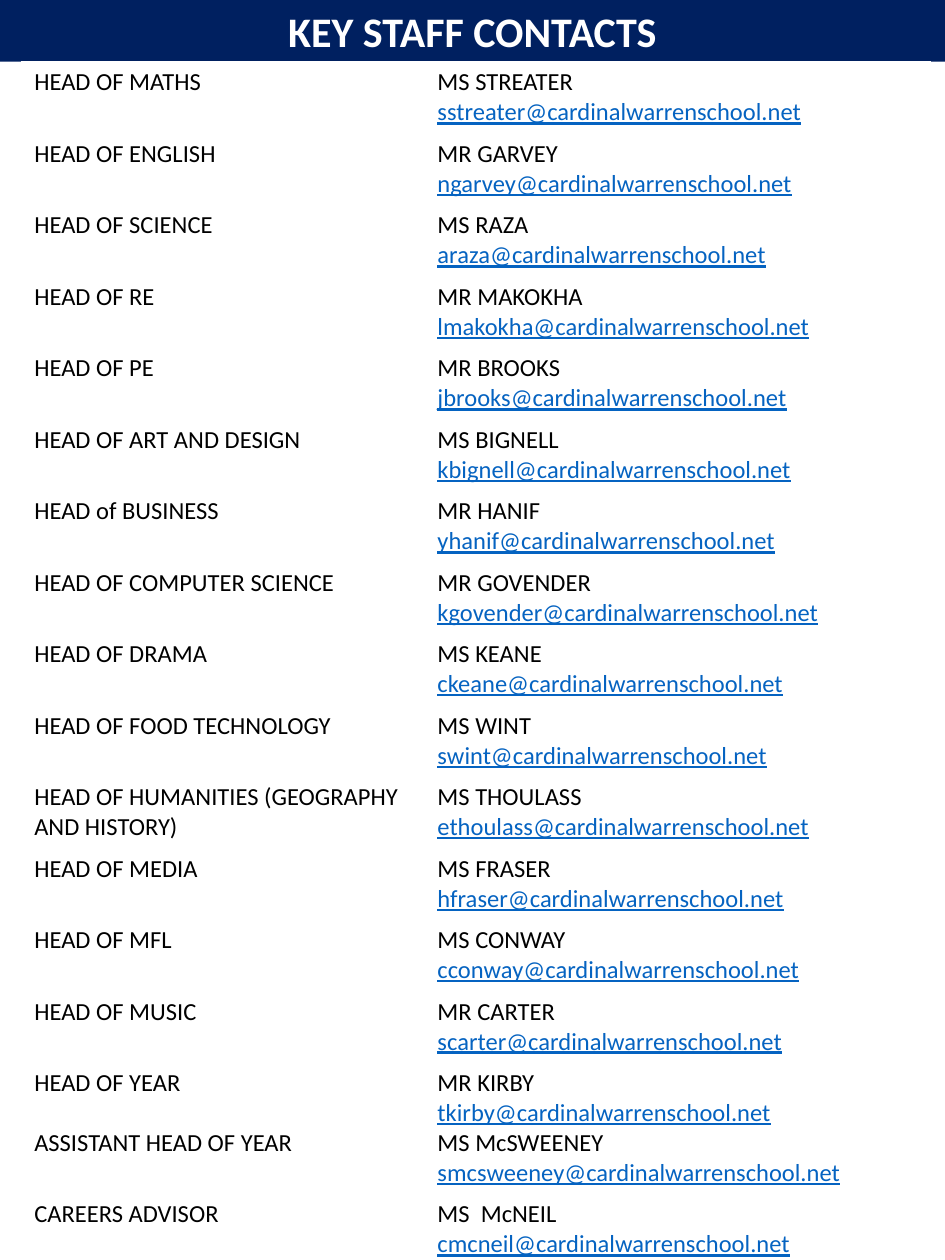
from dataclasses import dataclass

from pptx import Presentation
from pptx.dml.color import RGBColor
from pptx.enum.text import MSO_ANCHOR, MSO_AUTO_SIZE, PP_ALIGN
from pptx.util import Pt

CENTER = PP_ALIGN.CENTER
LEFT = PP_ALIGN.LEFT
MIDDLE = MSO_ANCHOR.MIDDLE
TOP = MSO_ANCHOR.TOP
FIXED_SIZE = MSO_AUTO_SIZE.NONE
TITLE_ONLY = 5

DOMAIN = "cardinalwarrenschool.net"
CONTACTS = [
    [("HEAD OF MATHS", "MS STREATER", "sstreater")],
    [("HEAD OF ENGLISH", "MR GARVEY", "ngarvey")],
    [("HEAD OF SCIENCE", "MS RAZA", "araza")],
    [("HEAD OF RE", "MR MAKOKHA", "lmakokha")],
    [("HEAD OF PE", "MR BROOKS", "jbrooks")],
    [("HEAD OF ART AND DESIGN", "MS BIGNELL", "kbignell")],
    [("HEAD of BUSINESS", "MR HANIF", "yhanif")],
    [("HEAD OF COMPUTER SCIENCE", "MR GOVENDER", "kgovender")],
    [("HEAD OF DRAMA", "MS KEANE", "ckeane")],
    [("HEAD OF FOOD TECHNOLOGY", "MS WINT", "swint")],
    [("HEAD OF HUMANITIES (GEOGRAPHY AND HISTORY)", "MS THOULASS", "ethoulass")],
    [("HEAD OF MEDIA", "MS FRASER", "hfraser")],
    [("HEAD OF MFL", "MS CONWAY", "cconway")],
    [("HEAD OF MUSIC", "MR CARTER", "scarter")],
    [
        ("HEAD OF YEAR", "MR KIRBY", "tkirby"),
        ("ASSISTANT HEAD OF YEAR", "MS McSWEENEY", "smcsweeney"),
    ],
    [("CAREERS ADVISOR", "MS  McNEIL", "cmcneil")],
]


@dataclass(frozen=True)
class Theme:
    font: str = "Calibri"
    title_size: float = 24
    body_size: float = 14
    line_height: float = 17
    banner: RGBColor = RGBColor(0x00, 0x20, 0x60)
    title: RGBColor = RGBColor(0xFF, 0xFF, 0xFF)
    text: RGBColor = RGBColor(0x00, 0x00, 0x00)
    link: RGBColor = RGBColor(0x05, 0x63, 0xC1)


def write_line(frame, text, *, font, size, color, first=False, bold=False,
               underline=False, align=LEFT, space_before=0):
    para = frame.paragraphs[0] if first else frame.add_paragraph()
    para.alignment = align
    para.space_before = Pt(space_before)
    span = para.add_run()
    span.text = text
    span.font.name = font
    span.font.size = Pt(size)
    span.font.color.rgb = color
    span.font.bold = bold
    span.font.underline = underline


class ContactPage:
    def __init__(self, page, theme):
        self.page = page
        self.theme = theme

    def banner(self, text, left, top, width, height):
        box = self.page.shapes.title
        box.left, box.top, box.width, box.height = map(Pt, (left, top, width, height))
        box.fill.solid()
        box.fill.fore_color.rgb = self.theme.banner
        frame = box.text_frame
        frame.auto_size = FIXED_SIZE
        frame.vertical_anchor = MIDDLE
        write_line(frame, text, font=self.theme.font, size=self.theme.title_size,
                   color=self.theme.title, first=True, bold=True, align=CENTER)

    def cell(self, cell, lines):
        cell.fill.background()
        cell.vertical_anchor = TOP
        cell.margin_left = cell.margin_right = Pt(7.2)
        cell.margin_top = cell.margin_bottom = Pt(3.4)
        for index, (text, is_link, gap) in enumerate(lines):
            write_line(cell.text_frame, text, font=self.theme.font,
                       size=self.theme.body_size,
                       color=self.theme.link if is_link else self.theme.text,
                       first=index == 0, underline=is_link, space_before=gap)

    def contact_table(self, contacts, left, top, column_widths, row_height):
        holder = self.page.shapes.add_table(
            len(contacts), len(column_widths), Pt(left), Pt(top),
            Pt(sum(column_widths)), Pt(row_height * len(contacts)))
        table = holder.table
        table.first_row = False
        table.horz_banding = False
        for column, width in zip(table.columns, column_widths):
            column.width = Pt(width)
        for row, people in zip(table.rows, contacts):
            roles = [(role, False, self.theme.line_height if index else 0)
                     for index, (role, _, _) in enumerate(people)]
            details = [line for _, name, user in people
                       for line in ((name, False, 0), (f"{user}@{DOMAIN}", True, 0))]
            self.cell(row.cells[0], roles)
            self.cell(row.cells[1], details)


def main():
    deck = Presentation()
    deck.slide_width = Pt(540)
    deck.slide_height = Pt(720)
    page = deck.slides.add_slide(deck.slide_layouts[TITLE_ONLY])
    contact_page = ContactPage(page, Theme())
    contact_page.banner("KEY STAFF CONTACTS", 0, -0.7, 540, 36)
    contact_page.contact_table(CONTACTS, 12.4, 35.3, (230.4, 288.7), 32)
    deck.save("out.pptx")


if __name__ == "__main__":
    main()
